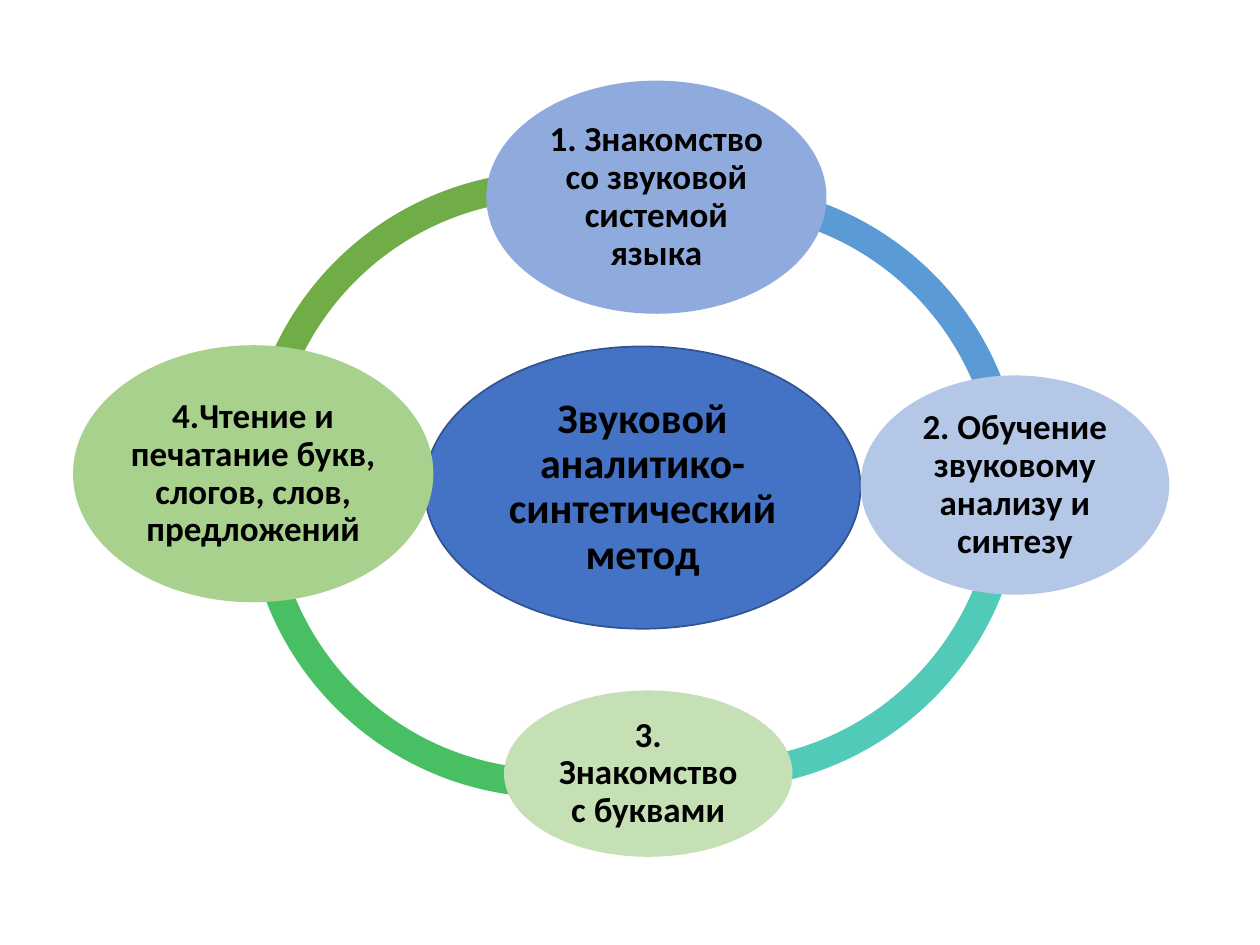
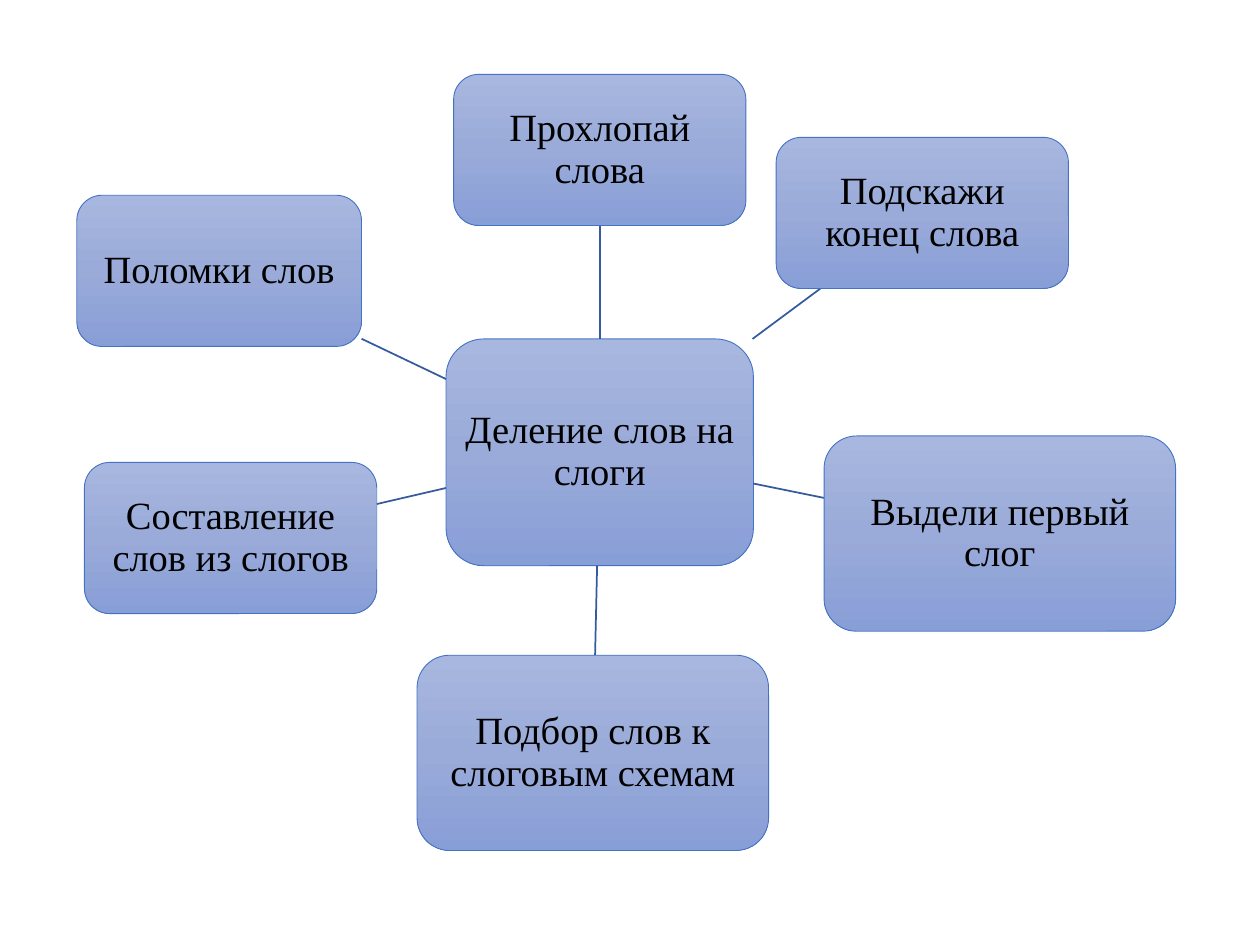
"""Build two diagrams: the stages of the sound method and syllable games."""
from copy import deepcopy
from dataclasses import dataclass

from lxml.etree import SubElement
from pptx import Presentation
from pptx.dml.color import RGBColor
from pptx.enum.shapes import MSO_CONNECTOR, MSO_SHAPE as Preset
from pptx.enum.text import MSO_ANCHOR, PP_ALIGN
from pptx.oxml.ns import qn
from pptx.util import Inches, Pt


@dataclass(frozen=True)
class Theme:
    """Colours, fonts and sizes used on both slides."""
    text: str = "000000"
    hub_fill: str = "4472C4"
    hub_line: str = "325491"
    card_line: str = "4472C4"
    spoke: str = "365B9D"
    card_gradient: tuple = ((0, "A8B7DF"), (0.5, "9AABD9"), (1, "889ED7"))
    cycle_font: str = "Calibri"
    card_font: str = "Times New Roman"
    hub_size: int = 24
    stage_size: int = 20
    card_size: int = 22
    cycle_inset: float = 0.03
    card_inset: float = 0.06
    line_spacing: float = 0.9


THEME = Theme()
SLIDE_SIZE = (10, 7.5)

ARC_SIZE = 4.87
ARC_THICKNESS = 0.046
ARCS = [
    ((1.95, 1.36), (108.428, 174.177), "70AD47"),
    ((1.95, 1.46), (42.728, 109.79), "49BF64"),
    ((3.25, 1.39), (0.462, 61.7), "52CAB8"),
    ((3.25, 1.46), (155.215, 215.383), "5B9BD5"),
]
METHOD = ("Звуковой аналитико-синтетический метод", (3.37, 2.75, 3.46, 2.24))
STAGES = [
    ("1. Знакомство со звуковой системой языка", (3.86, 0.64, 2.7, 1.85), "8FAADC"),
    ("2. Обучение звуковому анализу и синтезу", (6.83, 2.98, 2.45, 1.74), "B4C7E7"),
    ("3. Знакомство с буквами", (4, 5.48, 2.29, 1.32), "C5E0B4"),
    ("4.Чтение и печатание букв, слогов, слов, предложений", (0.58, 2.74, 2.86, 2.04), "A9D18E"),
]

SMALL, LARGE = (2.32, 1.2), (2.79, 1.55)
SYLLABLES = ("Деление слов на слоги", (3.54, 2.69, 2.44, 1.8))
GAMES = [
    ("Прохлопай слова", (3.6, 0.59, *SMALL)),
    ("Подскажи конец слова", (6.16, 1.09, *SMALL)),
    ("Выдели первый слог", (6.54, 3.46, *LARGE)),
    ("Подбор слов к слоговым схемам", (3.31, 5.2, *LARGE)),
    ("Составление слов из слогов", (0.67, 3.67, *SMALL)),
    ("Поломки слов", (0.61, 1.55, 2.26, 1.2)),
]


def rgb(code):
    """Turn a hex code into a colour."""
    return RGBColor.from_string(code)


def add_shape(slide, preset, box, fill=None, line=None, line_width=1):
    """Add a preset shape without a shadow."""
    shape = slide.shapes.add_shape(preset, *map(Inches, box))
    shape.shadow.inherit = False
    if fill:
        shape.fill.solid()
        shape.fill.fore_color.rgb = rgb(fill)
    if line:
        shape.line.color.rgb = rgb(line)
        shape.line.width = Pt(line_width)
    else:
        shape.line.fill.background()
    return shape


def write(shape, text, font, size, inset, bold=False):
    """Write centred text inside a shape."""
    frame = shape.text_frame
    frame.word_wrap = True
    frame.vertical_anchor = MSO_ANCHOR.MIDDLE
    frame.margin_left = frame.margin_right = Inches(inset)
    frame.margin_top = frame.margin_bottom = Inches(inset)
    paragraph = frame.paragraphs[0]
    paragraph.alignment = PP_ALIGN.CENTER
    paragraph.line_spacing = THEME.line_spacing
    run = paragraph.add_run()
    run.text = text
    run.font.name, run.font.size, run.font.bold = font, Pt(size), bold
    run.font.color.rgb = rgb(THEME.text)


def add_oval(slide, text, box, size, **look):
    """Add an ellipse with a bold caption."""
    oval = add_shape(slide, Preset.OVAL, box, **look)
    write(oval, text, THEME.cycle_font, size, THEME.cycle_inset, bold=True)


def apply_gradient(shape, stops):
    """Fill a shape from top to bottom with the given stops."""
    shape.fill.gradient()
    shape.fill.gradient_angle = 270
    stop_list = shape._element.spPr.find(".//" + qn("a:gsLst"))
    while len(stop_list) < len(stops):
        stop_list.append(deepcopy(stop_list[0]))
    for stop, (position, color) in zip(shape.fill.gradient_stops, stops):
        stop.position = position
        stop.color.rgb = rgb(color)


def add_card(slide, text, box):
    """Add a rounded gradient card with a caption."""
    card = add_shape(slide, Preset.ROUNDED_RECTANGLE, box, line=THEME.card_line, line_width=0.5)
    apply_gradient(card, THEME.card_gradient)
    write(card, text, THEME.card_font, THEME.card_size, THEME.card_inset)


def center(box):
    """Return the middle of a box."""
    left, top, width, height = box
    return left + width / 2, top + height / 2


def edge_point(box, target):
    """Return where the line from the middle of a box to a target leaves it."""
    x, y = center(box)
    across, down = target[0] - x, target[1] - y
    share = 1 / max(abs(across) * 2 / box[2], abs(down) * 2 / box[3])
    return x + across * share, y + down * share


def add_spoke(slide, hub, card):
    """Join two boxes along the line between their middles."""
    ends = edge_point(hub, center(card)) + edge_point(card, center(hub))
    spoke = slide.shapes.add_connector(MSO_CONNECTOR.STRAIGHT, *map(Inches, ends))
    spoke.line.color.rgb = rgb(THEME.spoke)
    spoke.line.width = Pt(1)
    SubElement(spoke._element.spPr, qn("a:effectLst"))


def build_cycle(slide):
    """Draw the ring of stages around the method."""
    for corner, angles, color in ARCS:
        arc = add_shape(slide, Preset.BLOCK_ARC, (*corner, ARC_SIZE, ARC_SIZE), fill=color)
        for index, value in enumerate((*angles, ARC_THICKNESS)):
            arc.adjustments[index] = value
    add_oval(slide, *METHOD, THEME.hub_size, fill=THEME.hub_fill, line=THEME.hub_line)
    for text, box, color in STAGES:
        add_oval(slide, text, box, THEME.stage_size, fill=color)


def build_games(slide):
    """Draw the games around the syllable card."""
    add_card(slide, *SYLLABLES)
    for text, box in GAMES:
        add_spoke(slide, SYLLABLES[1], box)
        add_card(slide, text, box)


def main():
    """Build and save the presentation."""
    presentation = Presentation()
    presentation.slide_width, presentation.slide_height = map(Inches, SLIDE_SIZE)
    blank = presentation.slide_layouts.get_by_name("Blank")
    for build in (build_cycle, build_games):
        build(presentation.slides.add_slide(blank))
    presentation.save("out.pptx")


if __name__ == "__main__":
    main()
